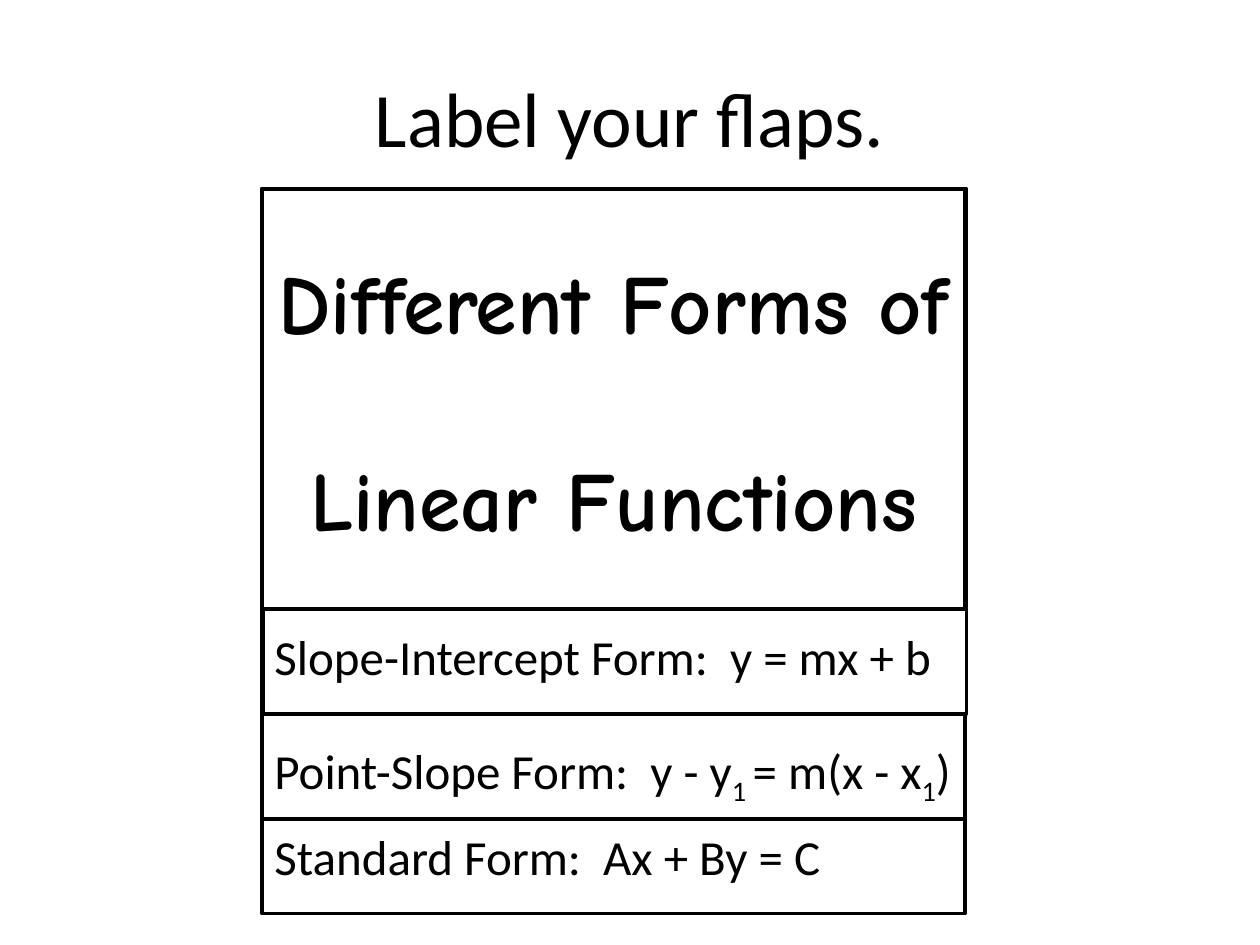
from dataclasses import dataclass

from pptx import Presentation
from pptx.dml.color import RGBColor
from pptx.enum.shapes import MSO_SHAPE
from pptx.enum.text import MSO_ANCHOR, PP_ALIGN
from pptx.util import Inches, Pt


@dataclass(frozen=True)
class Theme:
    ink: RGBColor = RGBColor(0, 0, 0)
    paper: RGBColor = RGBColor(255, 255, 255)
    body_font: str = "Calibri"
    cover_font: str = "Comic Neue"
    title_size: int = 44
    cover_size: int = 48
    label_size: int = 28
    cover_gap: int = 55
    outline: int = 2


THEME = Theme()
SLIDE_WIDTH, SLIDE_HEIGHT = 10, 7.5
FLAP_LEFT, FLAP_TOP, FLAP_WIDTH = 2.08, 1.5, 5.58
ROW = SLIDE_HEIGHT / 9
COVER_ROWS = 4
# Back to front: rows down to the lower edge, and a small shift to the right
FLAPS = [(6.9, 0), (6, 0), (5, 0.01), (COVER_ROWS, 0)]
# Top, width and spans of each label; a span is its text and whether it is a subscript
LABELS = [
    (4.92, 5.61, [("Slope-Intercept Form:  y = mx + b", False)]),
    (5.83, 5.92, [("Point-Slope Form:  y - y", False), ("1 ", True),
                  ("= m(x - x", False), ("1", True), (")", False)]),
    (6.51, 5.61, [("Standard Form:  Ax + By = C", False)]),
]


def write(frame, paragraphs, *, size, font=THEME.body_font, bold=False,
          align=PP_ALIGN.LEFT, anchor=MSO_ANCHOR.TOP, gap=0):
    """Fill a frame; each paragraph is a list of (text, is_subscript) spans."""
    frame.word_wrap = True
    frame.vertical_anchor = anchor
    for index, spans in enumerate(paragraphs):
        para = frame.add_paragraph() if index else frame.paragraphs[0]
        para.alignment = align
        if index and gap:
            para.space_before = Pt(gap)
        for text, is_subscript in spans:
            span = para.add_run()
            span.text = text
            span.font.name = font
            span.font.size = Pt(size)
            span.font.bold = bold
            span.font.color.rgb = THEME.ink
            if is_subscript:
                span._r.get_or_add_rPr().set("baseline", "-25000")


def add_text(slide, left, top, width, height, paragraphs, **text_format):
    box = slide.shapes.add_textbox(Inches(left), Inches(top), Inches(width), Inches(height))
    write(box.text_frame, paragraphs, **text_format)


def add_flap(slide, rows, shift):
    flap = slide.shapes.add_shape(
        MSO_SHAPE.RECTANGLE, Inches(FLAP_LEFT + shift), Inches(FLAP_TOP),
        Inches(FLAP_WIDTH), Inches(rows * ROW))
    flap.shadow.inherit = False
    flap.fill.solid()
    flap.fill.fore_color.rgb = THEME.paper
    flap.line.color.rgb = THEME.ink
    flap.line.width = Pt(THEME.outline)
    return flap


def main():
    deck = Presentation()
    deck.slide_width, deck.slide_height = Inches(SLIDE_WIDTH), Inches(SLIDE_HEIGHT)
    slide = deck.slides.add_slide(deck.slide_layouts[6])

    add_text(slide, 0.05 * SLIDE_WIDTH, 0.04 * SLIDE_HEIGHT, 0.9 * SLIDE_WIDTH, 1.5 * ROW,
             [[("Label your flaps.", False)]], size=THEME.title_size,
             align=PP_ALIGN.CENTER, anchor=MSO_ANCHOR.MIDDLE)

    cover = [add_flap(slide, rows, shift) for rows, shift in FLAPS][-1]
    write(cover.text_frame, [[("Different Forms of", False)], [("Linear Functions", False)]],
          size=THEME.cover_size, font=THEME.cover_font, bold=True,
          align=PP_ALIGN.CENTER, anchor=MSO_ANCHOR.MIDDLE, gap=THEME.cover_gap)

    for top, width, spans in LABELS:
        add_text(slide, FLAP_LEFT, top, width, 0.57, [spans], size=THEME.label_size)

    deck.save("out.pptx")


if __name__ == "__main__":
    main()
